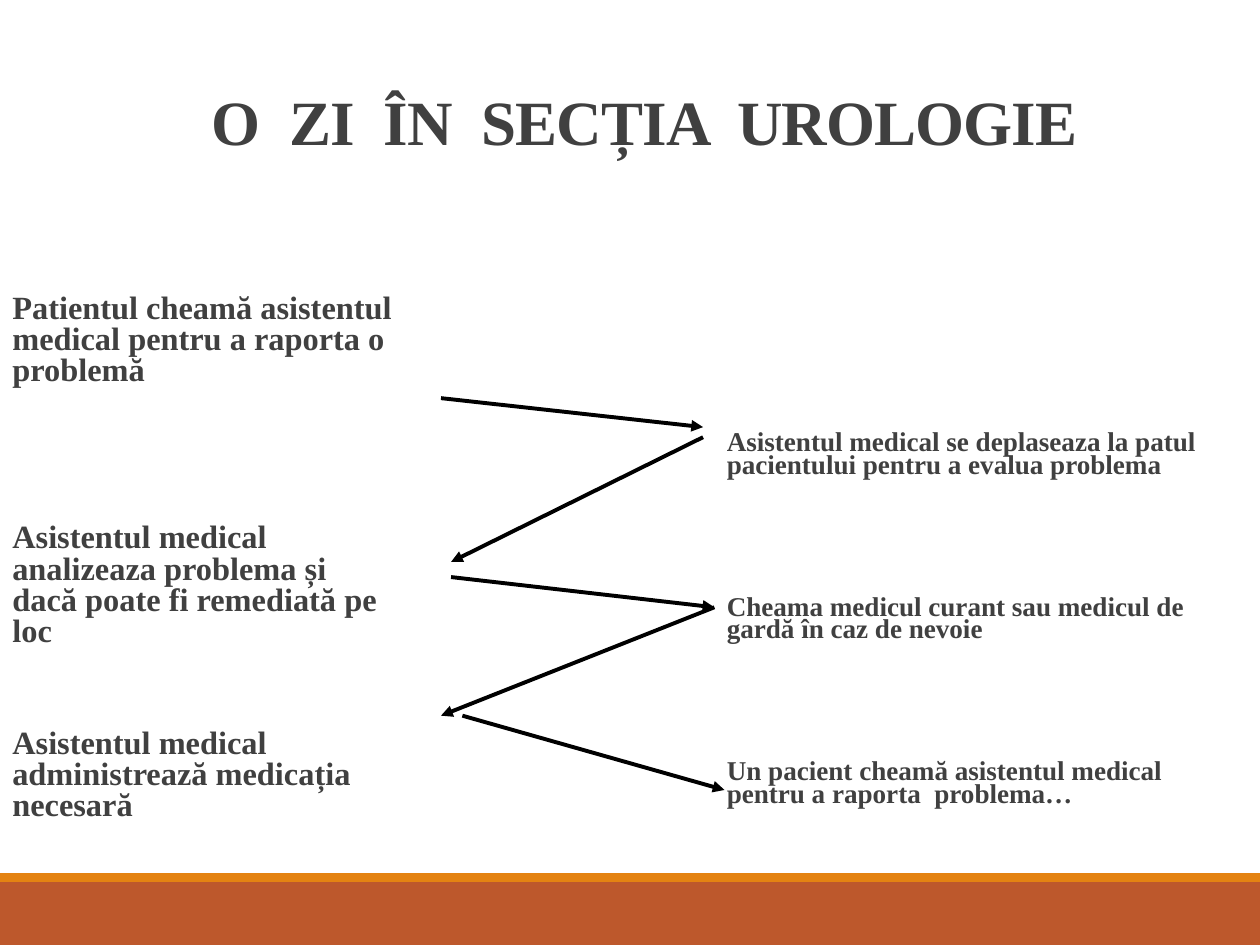
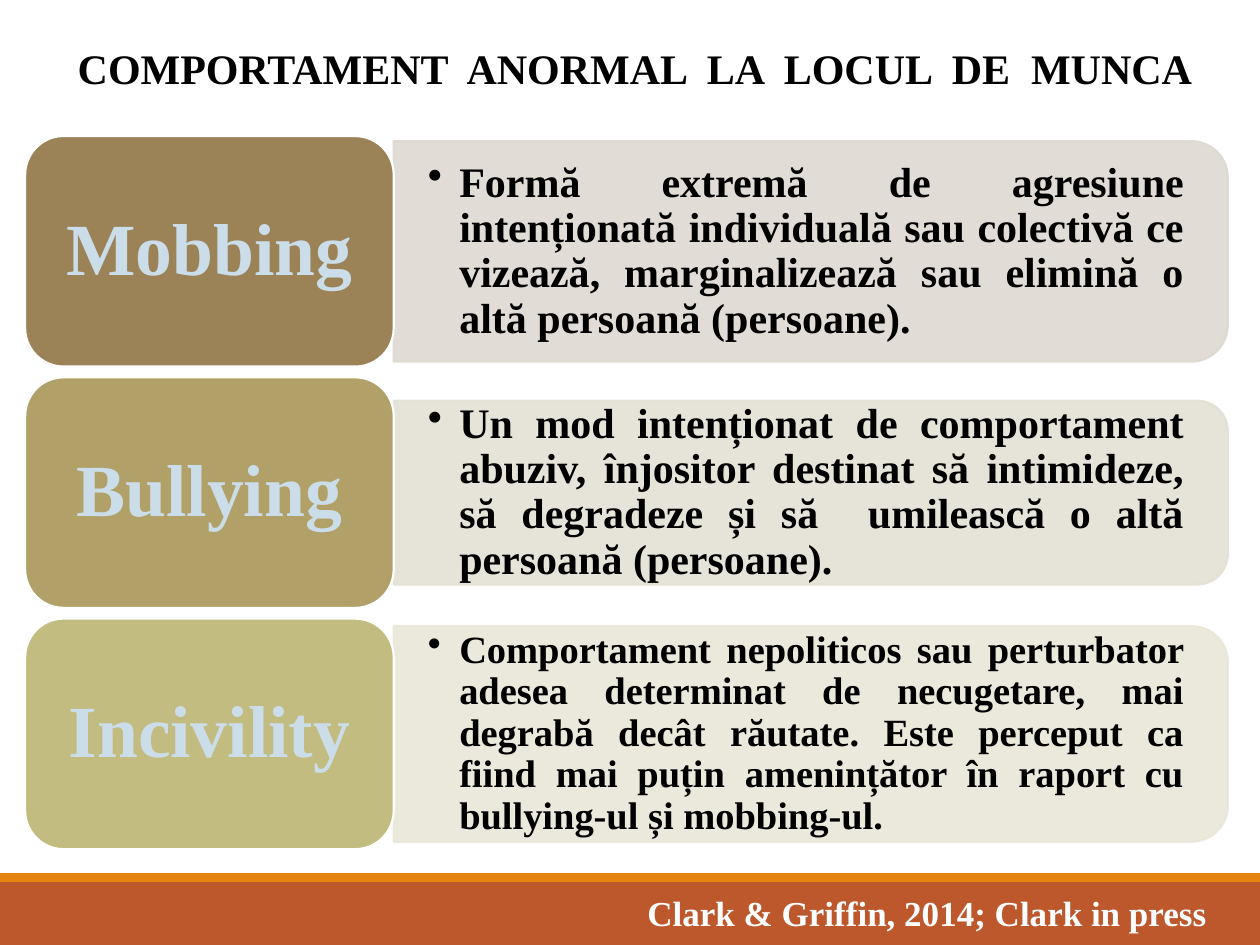
import pptx
import pptx.dml.color
import pptx.enum.shapes
import pptx.enum.text
import pptx.oxml.ns
import pptx.util
from lxml import etree

SHAPE = pptx.enum.shapes.MSO_SHAPE
ALIGN = pptx.enum.text.PP_ALIGN
ANCHOR = pptx.enum.text.MSO_ANCHOR
COLS, ROWS = 100, 75
FONT = "Times New Roman"
INK, BLACK, WHITE = "404040", "000000", "FFFFFF"
RUST, AMBER, PALE = "BD582C", "E48312", "CCDDEA"


def hue(code):
    return pptx.dml.color.RGBColor.from_string(code)


def sub(parent, tag, **attrs):
    return etree.SubElement(parent, pptx.oxml.ns.qn(tag), **attrs)


class Deck:
    def __init__(self):
        self.prs = pptx.Presentation()
        self.prs.slide_width = pptx.util.Inches(10)
        self.prs.slide_height = pptx.util.Inches(7.5)
        self.slide = None

    def x(self, cols):
        return round(self.prs.slide_width * cols / COLS)

    def y(self, rows):
        return round(self.prs.slide_height * rows / ROWS)

    def frame(self, left, top, width, height):
        return self.x(left), self.y(top), self.x(width), self.y(height)

    def start(self):
        self.slide = self.prs.slides.add_slide(self.prs.slide_layouts[5])
        self.shape(SHAPE.RECTANGLE, (0, 70, COLS, 5), RUST)
        self.shape(SHAPE.RECTANGLE, (0, 69.3, COLS, 0.7), AMBER)

    def label(self, shape, lines, size, color, align=ALIGN.LEFT, anchor=ANCHOR.TOP,
              inset=(1, 0.5), lead=1, gaps=(0,), bullet=False, wrap=True):
        body = shape.text_frame
        body.word_wrap = wrap
        body.auto_size = pptx.enum.text.MSO_AUTO_SIZE.NONE
        body.vertical_anchor = anchor
        body.margin_left = body.margin_right = self.x(inset[0])
        body.margin_top = body.margin_bottom = self.y(inset[1])
        body.text = "\n".join(lines)
        for para, gap in zip(body.paragraphs, gaps):
            para.alignment = align
            para.line_spacing = lead
            para.space_before = pptx.util.Pt(gap)
            if bullet:
                props = para._p.get_or_add_pPr()
                props.set("marL", str(self.x(2.5)))
                props.set("indent", str(-self.x(2.5)))
                sub(props, "a:buChar", char="•")
            font = para.font
            font.name, font.size, font.bold = FONT, pptx.util.Pt(size), True
            font.color.rgb = hue(color)

    def title(self, box, text, size, color, track=0, **style):
        shape = self.slide.shapes.title
        shape.left, shape.top, shape.width, shape.height = self.frame(*box)
        self.label(shape, [text], size, color, ALIGN.CENTER, **style)
        for run in shape.text_frame.paragraphs[0].runs:
            run._r.get_or_add_rPr().set("spc", str(track))

    def text(self, box, lines, size, color, **style):
        shape = self.slide.shapes.add_textbox(*self.frame(*box))
        self.label(shape, lines, size, color, **style)

    def shape(self, kind, box, fill, line=None, alpha=None):
        shape = self.slide.shapes.add_shape(kind, *self.frame(*box))
        shape.shadow.inherit = False
        shape.fill.solid()
        shape.fill.fore_color.rgb = hue(fill)
        if line:
            shape.line.color.rgb = hue(line)
            shape.line.width = pptx.util.Pt(1.25)
        else:
            shape.line.fill.background()
        if alpha:
            for node in shape._element.spPr.iter(pptx.oxml.ns.qn("a:srgbClr")):
                sub(node, "a:alpha", val=str(alpha * 1000))
        return shape

    def bar(self, left, mid, width, height, fill):
        box = (left + (width - height) / 2, mid - width / 2, height, width)
        shape = self.shape(SHAPE.ROUND_2_SAME_RECTANGLE, box, fill, fill, 90)
        shape.rotation = 90

    def arrow(self, start, end):
        link = self.slide.shapes.add_connector(
            pptx.enum.shapes.MSO_CONNECTOR.STRAIGHT,
            self.x(start[0]), self.y(start[1]), self.x(end[0]), self.y(end[1]))
        link.line.color.rgb = hue(BLACK)
        link.line.width = pptx.util.Pt(2.25)
        sub(link.line._get_or_add_ln(), "a:tailEnd", type="triangle")
        sub(link._element.spPr, "a:effectLst")


def draw_day(deck):
    deck.start()
    deck.title((5.1, 5.4, 92.1, 7.7), "O  ZI  ÎN  SECȚIA  UROLOGIE", 36, INK,
               track=-50, anchor=ANCHOR.BOTTOM, lead=0.85)
    calls = ["Patientul cheamă asistentul medical pentru a raporta o problemă",
             "Asistentul medical analizeaza problema și dacă poate fi remediată pe loc",
             "Asistentul medical administrează medicația necesară"]
    deck.text((0, 22.9, 32.3, 44.2), calls, 18.5, INK, lead=0.8, gaps=(0, 77.7, 46.3))
    acts = ["Asistentul medical se deplaseaza la patul pacientului pentru a evalua problema",
            "Cheama medicul curant sau medicul de gardă în caz de nevoie",
            "Un pacient cheamă asistentul medical pentru a raporta  problema…"]
    deck.text((56.7, 33.9, 41.7, 33.2), acts, 15.5, INK, lead=0.7, gaps=(0, 68, 68))
    for start, end in [((35, 31.6), (55.8, 33.9)), ((55.8, 34.7), (35.8, 44.6)),
                       ((35.8, 45.8), (56.7, 48.2)), ((56.7, 48.2), (35, 56.8)),
                       ((36.7, 56.8), (57.5, 62.7))]:
        deck.arrow(start, end)


def draw_forms(deck):
    deck.start()
    deck.title((3.3, 2.9, 94.2, 5), "COMPORTAMENT  ANORMAL  LA  LOCUL  DE  MUNCA", 24, BLACK)
    forms = [
        ("Mobbing", "9B8357", "DED9D1", 17.5, 24,
         "Formă extremă de agresiune intenționată individuală sau colectivă ce vizează, "
         "marginalizează sau elimină o altă persoană (persoane)."),
        ("Bullying", "B1A169", "E4E0D4", 14.6, 24,
         "Un mod intenționat de comportament abuziv, înjositor destinat să intimideze, "
         "să degradeze și să  umilească o altă persoană (persoane)."),
        ("Incivility", "C2BC80", "E9E7D8", 17.1, 22,
         "Comportament nepoliticos sau perturbator adesea determinat de necugetare, "
         "mai degrabă decât răutate. Este perceput ca fiind mai puțin amenințător "
         "în raport cu bullying-ul și mobbing-ul."),
    ]
    left, split, wide, tall = 2, 31.25, 66.2, 18.3
    for row, (name, dark, light, high, size, note) in enumerate(forms):
        mid = 19.95 + 19.15 * row
        deck.bar(split, mid, wide, high, light)
        deck.text((split, mid - high / 2, 65.4, high), [note], size, BLACK,
                  align=ALIGN.JUSTIFY, anchor=ANCHOR.MIDDLE, inset=(2.7, 0),
                  lead=0.9, bullet=True)
        tile = deck.shape(SHAPE.ROUNDED_RECTANGLE,
                          (left, mid - tall / 2, split - left, tall), dark, WHITE)
        deck.label(tile, [name], 42, PALE, align=ALIGN.CENTER,
                   anchor=ANCHOR.MIDDLE, lead=0.9)
    deck.text((50.4, 70.3, 46.7, 4.4), ["Clark & Griffin, 2014; Clark in press"],
              20, WHITE, wrap=False)


def main():
    deck = Deck()
    draw_day(deck)
    draw_forms(deck)
    deck.prs.save("out.pptx")


if __name__ == "__main__":
    main()
